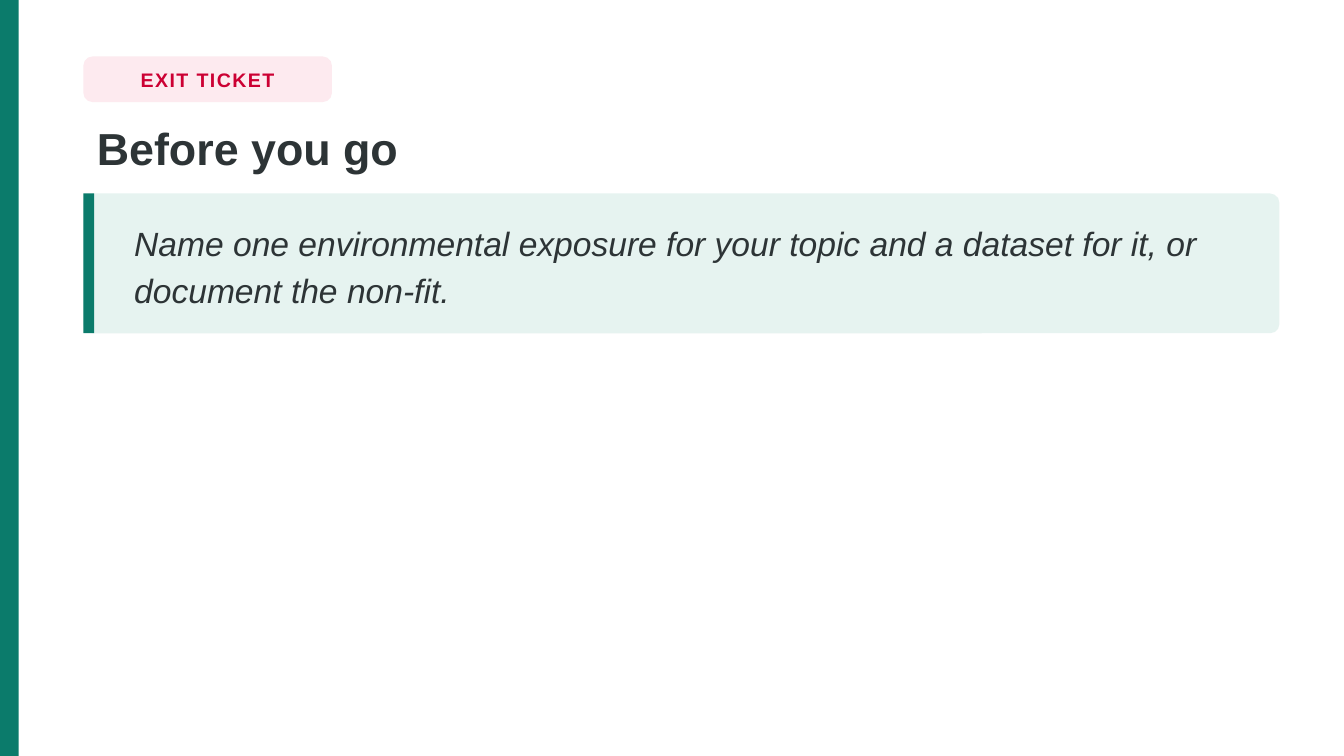
"""Build the exit ticket slide."""
from pptx import Presentation
from pptx.dml.color import RGBColor
from pptx.enum.shapes import MSO_SHAPE
from pptx.enum.text import MSO_ANCHOR, MSO_AUTO_SIZE, PP_ALIGN
from pptx.util import Pt

RECT, ROUND = MSO_SHAPE.RECTANGLE, MSO_SHAPE.ROUNDED_RECTANGLE
TOP, MIDDLE = MSO_ANCHOR.TOP, MSO_ANCHOR.MIDDLE
LEFT, CENTER = PP_ALIGN.LEFT, PP_ALIGN.CENTER
NO_FIT = MSO_AUTO_SIZE.NONE

GREEN = RGBColor(0x0B, 0x7B, 0x6B)
MINT = RGBColor(0xE6, 0xF3, 0xF0)
RED = RGBColor(0xCC, 0x00, 0x33)
PINK = RGBColor(0xFD, 0xEA, 0xEF)
INK = RGBColor(0x2D, 0x34, 0x36)
FONT = "Arial"

TAG = "EXIT TICKET"
TITLE = "Before you go"
PROMPT = ("Name one environmental exposure for your topic and a dataset for it, "
          "or document the non-fit.")

W, H = 720, 405
MARGIN, CONTENT_W = 44.64, 640.8
PANEL_TOP, PANEL_H = 103.68, 74.88
RADIUS = 5
PROMPT_LEFT, PROMPT_W, PROMPT_PAD = 64.8, 601.2, 3.6


def add_block(s, kind, x, y, w, h, color):
    sp = s.shapes.add_shape(kind, Pt(x), Pt(y), Pt(w), Pt(h))
    sp.shadow.inherit = False
    sp.fill.solid()
    sp.fill.fore_color.rgb = color
    sp.line.fill.background()
    if kind == ROUND:
        sp.adjustments[0] = RADIUS / min(w, h)
    return sp


def write(sp, text, size, color, anchor=TOP, align=LEFT, spacing=1.0,
          bold=False, italic=False, wrap=True):
    tf = sp.text_frame
    tf.auto_size = NO_FIT
    tf.word_wrap = wrap
    tf.vertical_anchor = anchor
    p = tf.paragraphs[0]
    p.alignment = align
    p.line_spacing = spacing
    r = p.add_run()
    r.text = text
    r.font.name = FONT
    r.font.size = Pt(size)
    r.font.bold = bold
    r.font.italic = italic
    r.font.color.rgb = color
    return r


def main():
    prs = Presentation()
    prs.slide_width, prs.slide_height = Pt(W), Pt(H)
    s = prs.slides.add_slide(prs.slide_layouts[5])

    add_block(s, RECT, 0, 0, 10.08, H, GREEN)

    tag = add_block(s, ROUND, MARGIN, 30.24, 133.2, 24.48, PINK)
    r = write(tag, TAG, 10.5, RED, MIDDLE, CENTER, bold=True, wrap=False)
    r.font._element.set("spc", "80")

    title = s.shapes.title
    title.left, title.top = Pt(MARGIN), Pt(60.48)
    title.width, title.height = Pt(CONTENT_W), Pt(40.32)
    write(title, TITLE, 24, INK, spacing=1.02, bold=True)

    add_block(s, ROUND, MARGIN, PANEL_TOP, CONTENT_W, PANEL_H, MINT)
    add_block(s, RECT, MARGIN, PANEL_TOP, 5.76, PANEL_H, GREEN)
    prompt = s.shapes.add_textbox(Pt(PROMPT_LEFT), Pt(PANEL_TOP + PROMPT_PAD),
                                  Pt(PROMPT_W), Pt(PANEL_H - 2 * PROMPT_PAD))
    write(prompt, PROMPT, 18, INK, MIDDLE, spacing=1.16, italic=True)

    prs.save("out.pptx")


if __name__ == "__main__":
    main()
